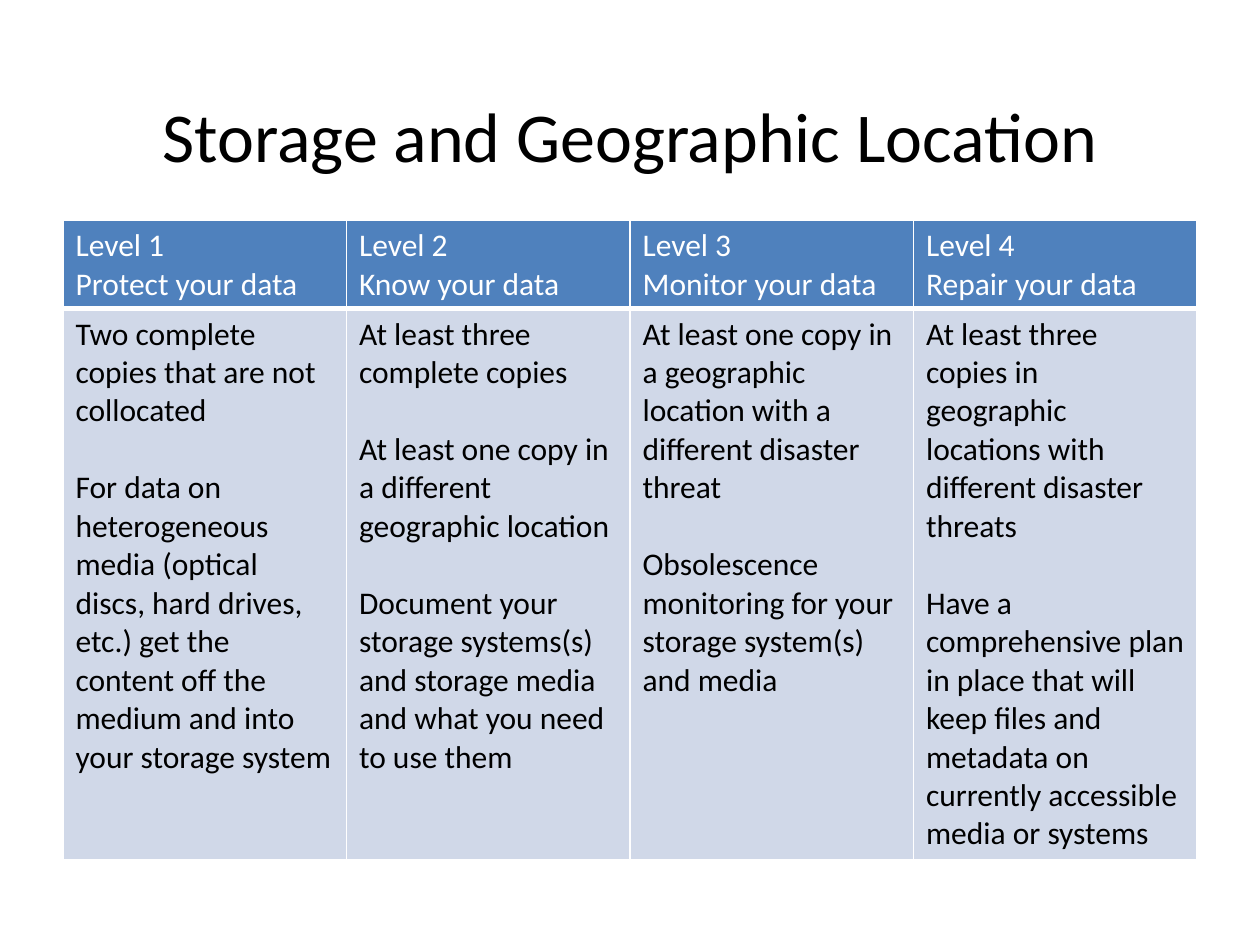
from lxml.etree import SubElement
from pptx import Presentation
from pptx.dml.color import RGBColor
from pptx.enum.text import MSO_ANCHOR, PP_ALIGN
from pptx.oxml.ns import qn
from pptx.util import Inches, Pt

BLACK = RGBColor(0x00, 0x00, 0x00)
WHITE = RGBColor(0xFF, 0xFF, 0xFF)
BLUE = RGBColor(0x4F, 0x81, 0xBD)
PALE_BLUE = RGBColor(0xD0, 0xD8, 0xE8)

LEVELS = [
    (["Level 1", "Protect your data"],
     ["Two complete copies that are not collocated",
      "For data on heterogeneous media (optical discs, hard drives, etc.) "
      "get the content off the medium and into your storage system"]),
    (["Level 2", "Know your data"],
     ["At least three complete copies",
      "At least one copy in a different geographic location",
      "Document your storage systems(s) and storage media and what you "
      "need to use them"]),
    (["Level 3", "Monitor your data"],
     ["At least one copy in a geographic location with a different "
      "disaster threat",
      "Obsolescence monitoring for your storage system(s) and media"]),
    (["Level 4", "Repair your data"],
     ["At least three copies in geographic locations with different "
      "disaster threats",
      "Have a comprehensive plan in place that will keep files and "
      "metadata on currently accessible media or systems"]),
]


class SlideBuilder:
    font = "Calibri"
    title_size = Pt(40)
    body_size = Pt(18)
    paragraph_gap = Pt(22)

    def __init__(self, slide):
        self.slide = slide

    def add_lines(self, tf, lines, size, color, align=PP_ALIGN.LEFT, gap=Pt(0)):
        for i, line in enumerate(lines):
            p = tf.paragraphs[0] if i == 0 else tf.add_paragraph()
            p.alignment = align
            if i:
                p.space_before = gap
            r = p.add_run()
            r.text = line
            r.font.name = self.font
            r.font.size = size
            r.font.bold = False
            r.font.color.rgb = color

    def title(self, text, left, top, width, height):
        sp = self.slide.shapes.add_textbox(left, top, width, height)
        tf = sp.text_frame
        tf.word_wrap = True
        tf.vertical_anchor = MSO_ANCHOR.MIDDLE
        self.add_lines(tf, [text], self.title_size, BLACK, PP_ALIGN.CENTER)

    def borders(self, cell, bottom):
        tc_pr = cell._tc.get_or_add_tcPr()
        for side, width in (("L", Pt(1)), ("R", Pt(1)), ("T", Pt(1)), ("B", bottom)):
            ln = SubElement(tc_pr, qn(f"a:ln{side}"), w=str(width))
            fill = SubElement(ln, qn("a:solidFill"))
            SubElement(fill, qn("a:srgbClr"), val=str(WHITE))

    def cell(self, cell, lines, fill, color, bottom, gap):
        self.borders(cell, bottom)
        cell.fill.solid()
        cell.fill.fore_color.rgb = fill
        self.add_lines(cell.text_frame, lines, self.body_size, color, gap=gap)

    def table(self, levels, left, top, width, row_heights):
        table = self.slide.shapes.add_table(
            len(row_heights), len(levels), left, top, width, sum(row_heights)).table
        for row, height in zip(table.rows, row_heights):
            row.height = height
        for col, (heading, body) in enumerate(levels):
            self.cell(table.cell(0, col), heading, BLUE, WHITE, Pt(3), Pt(0))
            self.cell(table.cell(1, col), body, PALE_BLUE, BLACK, Pt(1),
                      self.paragraph_gap)


def main():
    prs = Presentation()
    prs.slide_width, prs.slide_height = Inches(10), Inches(7.5)
    s = SlideBuilder(prs.slides.add_slide(prs.slide_layouts[6]))

    # Title
    s.title("Storage and Geographic Location",
            Inches(0.5), Inches(0.58), Inches(9), Inches(0.97))

    # Levels table
    s.table(LEVELS, Inches(0.5), Inches(1.75), Inches(9),
            [Inches(0.7), Inches(4.37)])

    prs.save("out.pptx")


if __name__ == "__main__":
    main()
